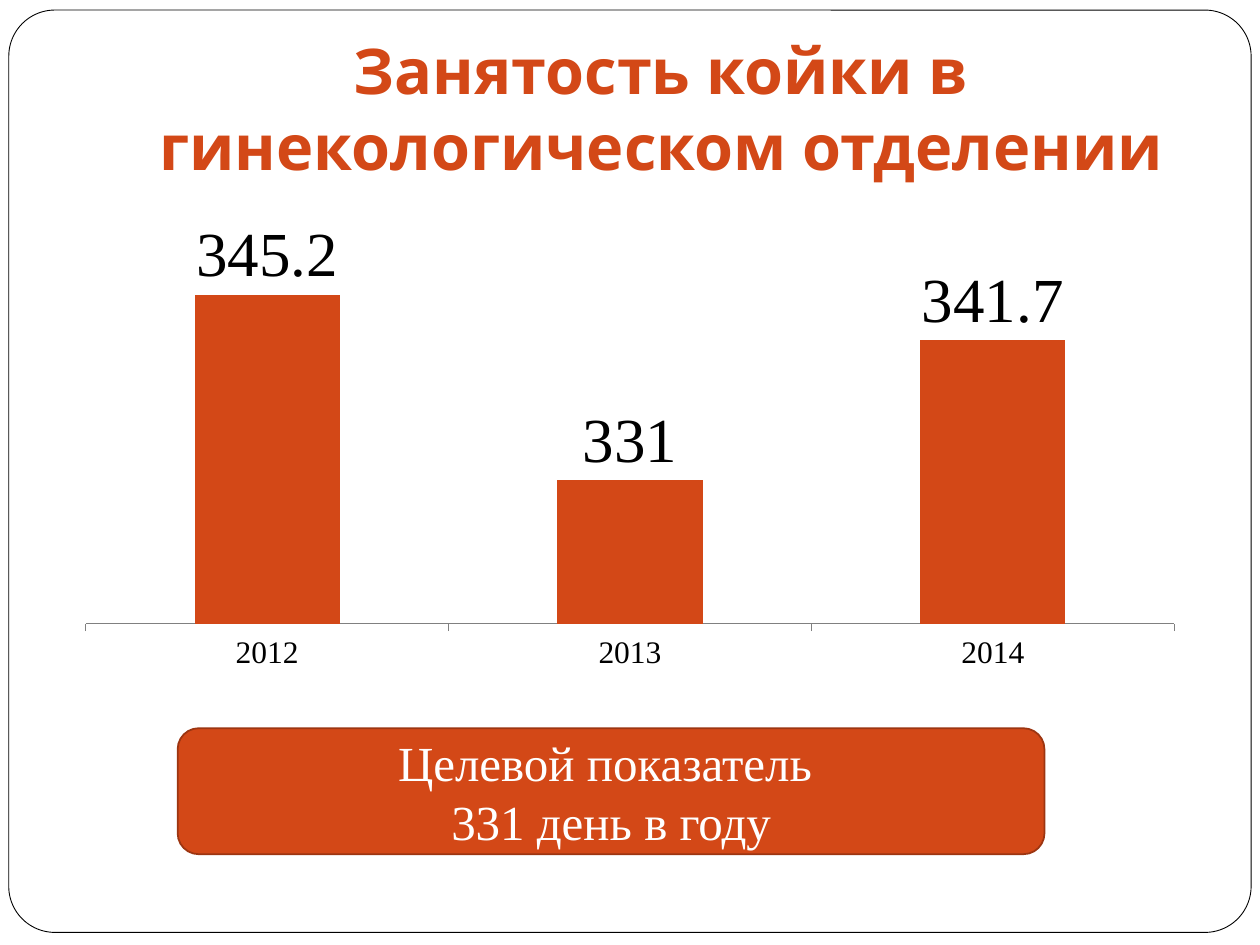
from pptx import Presentation
from pptx.chart.data import CategoryChartData
from pptx.dml.color import RGBColor
from pptx.enum.chart import XL_CHART_TYPE as ChartType, XL_LABEL_POSITION as LabelPos, XL_TICK_MARK as Tick
from pptx.enum.shapes import MSO_SHAPE as Shape
from pptx.enum.text import MSO_ANCHOR as Anchor, PP_ALIGN as Align
from pptx.util import Inches, Pt

ORANGE, DARK_ORANGE = "D34817", "9C3511"
WHITE, BLACK, GRAY = "FFFFFF", "000000", "808080"
SERIF = "Times New Roman"


def rgb(value):
    return RGBColor.from_string(value)


def box(values):
    return [Inches(v) for v in values]


def style_font(font, size, color, name, bold=False):
    font.size = Pt(size)
    font.name = name
    font.bold = bold
    font.color.rgb = rgb(color)


def write(tf, text, size, color, name, anchor, bold=False):
    tf.word_wrap = True
    tf.vertical_anchor = anchor
    tf.text = text
    for p in tf.paragraphs:
        p.alignment = Align.CENTER
        for r in p.runs:
            style_font(r.font, size, color, name, bold)


def add_panel(s, at, fill, line, width, radius=None):
    sp = s.shapes.add_shape(Shape.ROUNDED_RECTANGLE, *box(at))
    sp.shadow.inherit = False
    sp.fill.solid()
    sp.fill.fore_color.rgb = rgb(fill)
    sp.line.color.rgb = rgb(line)
    sp.line.width = Pt(width)
    if radius is not None:
        sp.adjustments[0] = radius
    return sp


def add_title(s, at, text):
    tf = s.shapes.add_textbox(*box(at)).text_frame
    tf.margin_bottom = Inches(0.1)
    write(tf, text, 36, ORANGE, "Karla", Anchor.BOTTOM, bold=True)


def add_column_chart(s, at, categories, values):
    data = CategoryChartData()
    data.categories = categories
    data.add_series("Series 1", values)
    chart = s.shapes.add_chart(ChartType.COLUMN_CLUSTERED, *box(at), data).chart
    style_font(chart.font, 18, BLACK, SERIF)
    chart.has_legend = False
    chart.has_title = False

    axis = chart.category_axis
    axis.major_tick_mark = Tick.OUTSIDE
    axis.format.line.color.rgb = rgb(GRAY)
    axis.format.line.width = Pt(0.75)

    scale = chart.value_axis
    scale.minimum_scale, scale.maximum_scale = 320, 350
    scale.has_major_gridlines = False
    scale.visible = False

    plot = chart.plots[0]
    plot.gap_width = 150
    plot.vary_by_categories = False
    plot.has_data_labels = True
    labels = plot.data_labels
    labels.show_value = True
    labels.position = LabelPos.OUTSIDE_END
    style_font(labels.font, 36, BLACK, SERIF)

    fill = plot.series[0].format.fill
    fill.solid()
    fill.fore_color.rgb = rgb(ORANGE)


def main():
    prs = Presentation()
    prs.slide_width, prs.slide_height = Inches(10), Inches(7.5)
    s = prs.slides.add_slide(prs.slide_layouts[6])

    add_panel(s, (0.07, 0.08, 9.86, 7.32), WHITE, BLACK, 0.5, radius=0.05)
    add_title(s, (1, 0.3, 8.5, 1.25), "Занятость койки в гинекологическом отделении")
    add_column_chart(s, (0.5, 1.75, 9, 3.64), ("2012", "2013", "2014"), (345.2, 331, 341.7))
    target = add_panel(s, (1.41, 5.78, 6.88, 1), ORANGE, DARK_ORANGE, 1)
    write(target.text_frame, "Целевой показатель \n331 день в году", 28, WHITE, SERIF, Anchor.MIDDLE)

    prs.save("out.pptx")


if __name__ == "__main__":
    main()
